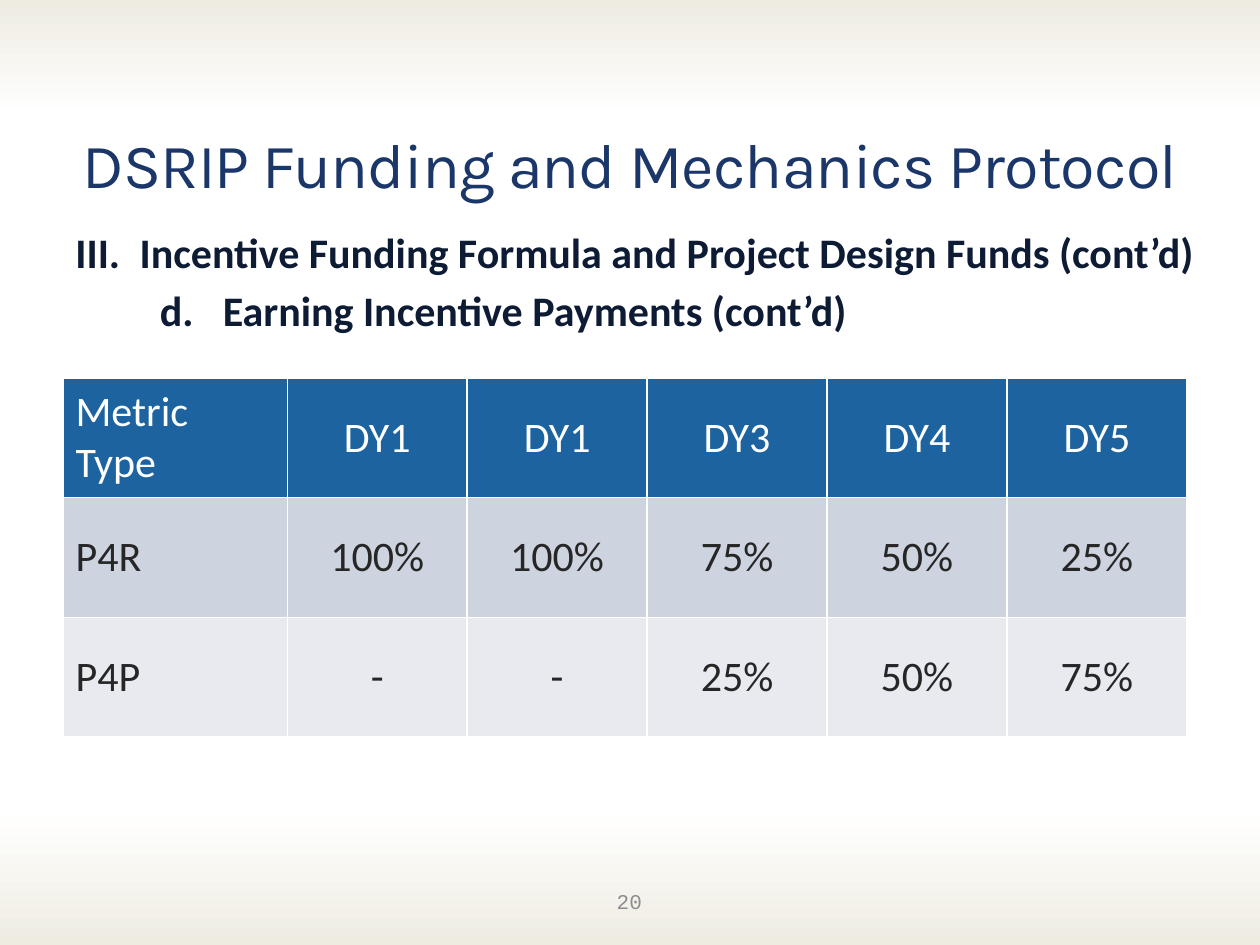
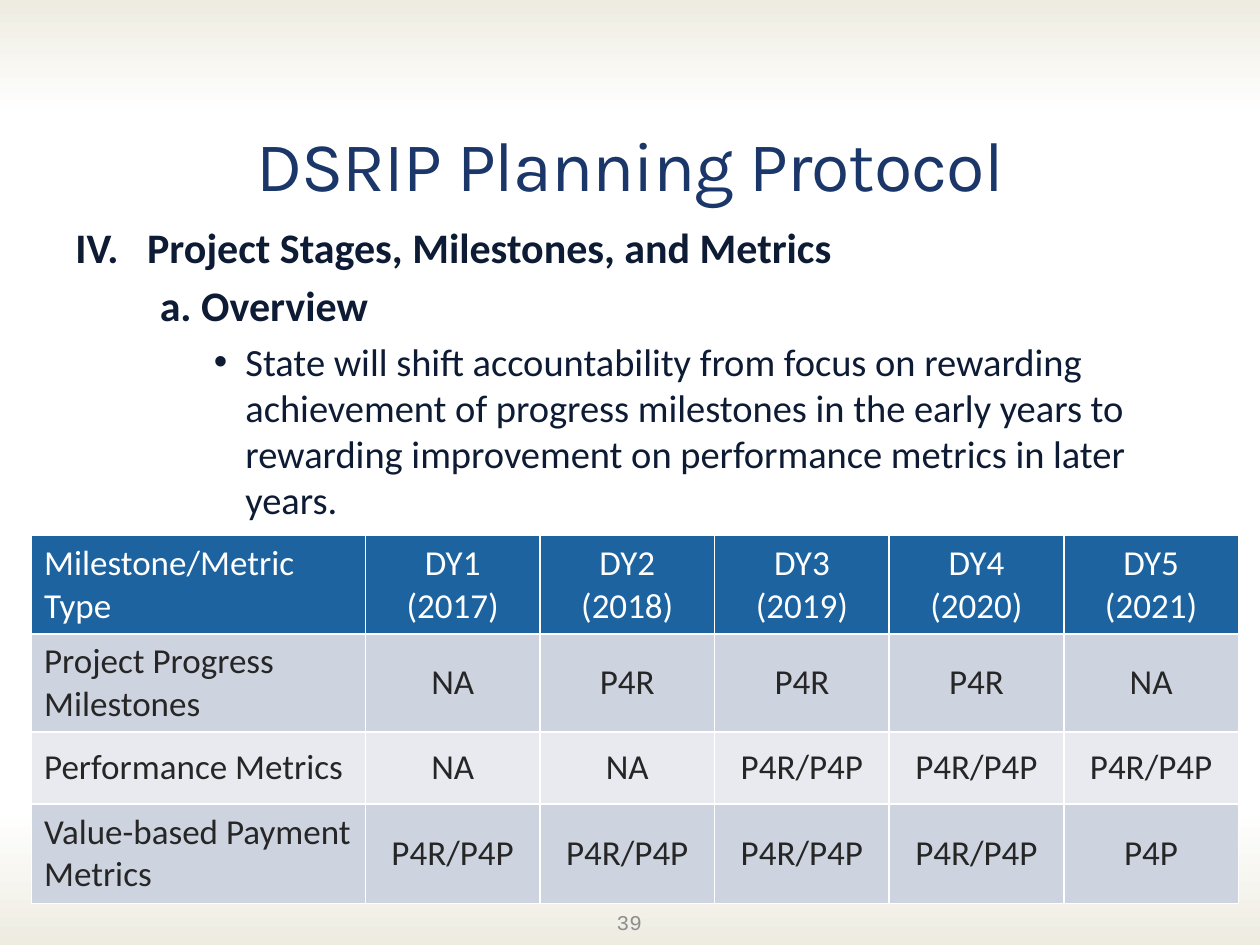
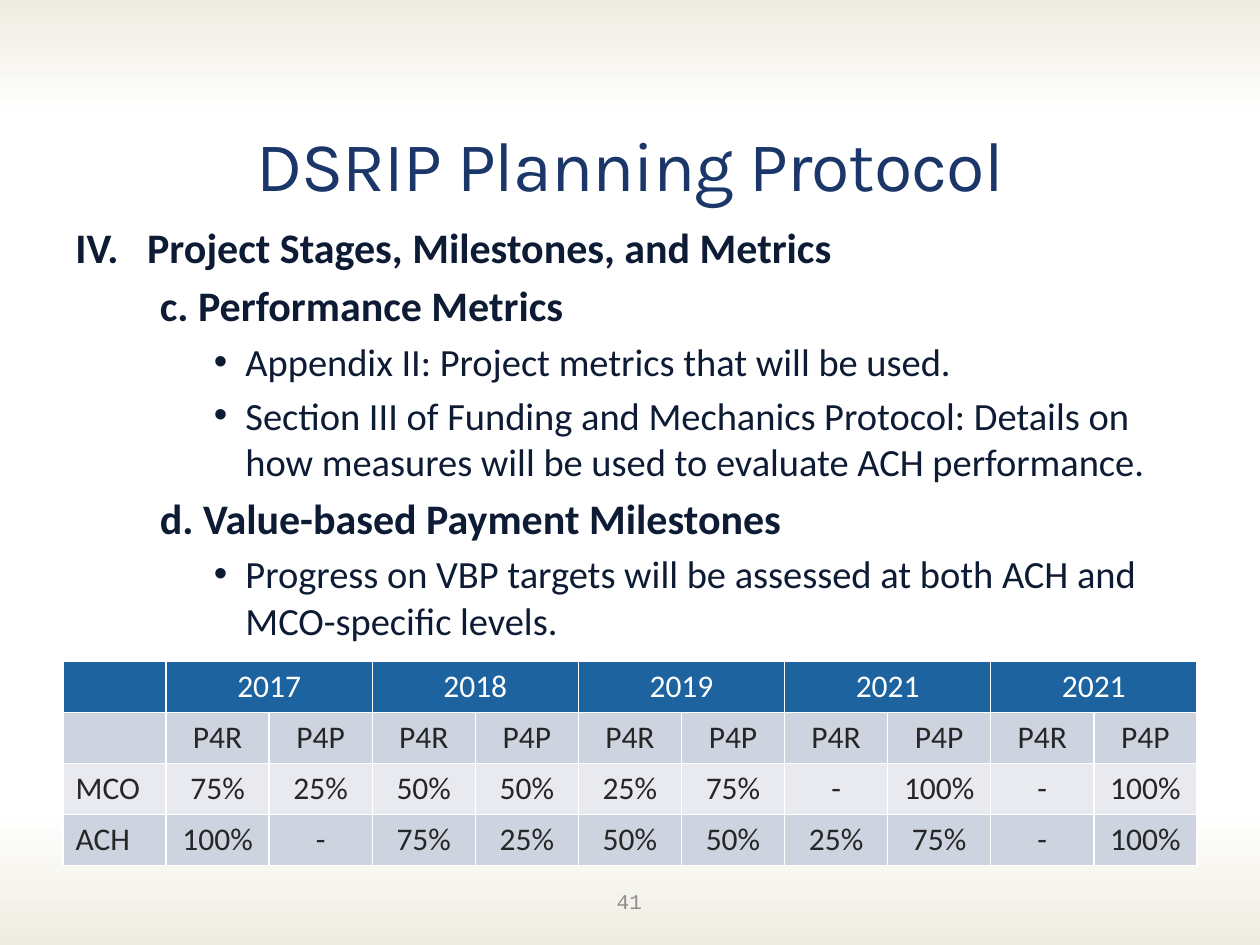
from lxml import etree
from pptx import Presentation
from pptx.dml.color import RGBColor
from pptx.enum.shapes import MSO_SHAPE
from pptx.enum.text import MSO_ANCHOR, PP_ALIGN
from pptx.oxml.ns import qn
from pptx.util import Inches, Pt

RECTANGLE = MSO_SHAPE.RECTANGLE
MIDDLE, TOP = MSO_ANCHOR.MIDDLE, MSO_ANCHOR.TOP
CENTER, LEFT = PP_ALIGN.CENTER, PP_ALIGN.LEFT

WHITE = RGBColor(0xFF, 0xFF, 0xFF)
BEIGE = RGBColor(0xEE, 0xEC, 0xE1)
TITLE_BLUE = RGBColor(0x1B, 0x36, 0x68)
NAVY = RGBColor(0x0E, 0x1B, 0x34)
GRAY = RGBColor(0x8D, 0x8D, 0x8D)
HEADER_BLUE = RGBColor(0x1C, 0x63, 0x9F)
CELL_TEXT = RGBColor(0x26, 0x26, 0x26)
ROW_FILLS = (RGBColor(0xCD, 0xD3, 0xDF), RGBColor(0xE8, 0xEA, 0xF0))

TITLE_FONT, BODY_FONT, NUMBER_FONT = "Karla", "Calibri", "Courier New"

# Outline levels: size, bold, left margin, hanging indent, bullet tag and attributes
LEVELS = {
    "section III": (24, True, 0.51, 0.51, None),
    "section IV": (24, True, 0.57, 0.57, None),
    "lettered": (24, True, 0.5, 0.5,
                 ("a:buAutoNum", {"type": "alphaLcPeriod", "startAt": "4"})),
    "topic": (24, True, 0, 0, None),
    "bullet": (22, False, 0.68, 0.25, ("a:buChar", {"char": "•"})),
}

NUMBER_TOP = 6.95
LOW_NUMBER_TOP = 7.13  # clears a table that reaches into the footer

PLANNING_TITLE = ("DSRIP Planning Protocol", 40)
STAGES_SECTION = ((0.5, 1.71, 7.67, 3.33),
                  [("section IV", "IV.\tProject Stages, Milestones, and Metrics")])
PLANNING_BODY = (1.17, 2.17, 8.34, 3.33)

# Content
SLIDES = [
    {
        "title": ("DSRIP Funding and Mechanics Protocol", 36),
        "number": ("20", NUMBER_TOP),
        "outline": [
            ((0.5, 1.75, 9.25, 0.54),
             [("section III", "III.\tIncentive Funding Formula and Project Design Funds (cont’d)")]),
            ((1.17, 2.21, 8.5, 3.33),
             [("lettered", "Earning Incentive Payments (cont’d)")]),
        ],
        "table": {
            "place": (0.5, 3, 8.92), "first_column": 1.78, "size": 24,
            "heights": [0.95] * 3, "header_span": 1,
            "rows": [
                ["Metric Type", "DY1", "DY1", "DY3", "DY4", "DY5"],
                ["P4R", "100%", "100%", "75%", "50%", "25%"],
                ["P4P", "-", "-", "25%", "50%", "75%"],
            ],
        },
    },
    {
        "title": PLANNING_TITLE,
        "number": ("39", LOW_NUMBER_TOP),
        "outline": [
            STAGES_SECTION,
            (PLANNING_BODY, [
                ("topic", "a. Overview"),
                ("bullet", "State will shift accountability from focus on rewarding "
                           "achievement of progress milestones in the early years to "
                           "rewarding improvement on performance metrics in later years."),
            ]),
        ],
        "table": {
            "place": (0.25, 4.25, 9.58), "first_column": 2.65, "size": 20,
            "heights": [0.78, 0.78, 0.57, 0.79], "header_span": 1,
            "rows": [
                ["Milestone/Metric Type", "DY1 (2017)", "DY2 (2018)", "DY3 (2019)",
                 "DY4 (2020)", "DY5 (2021)"],
                ["Project Progress Milestones", "NA", "P4R", "P4R", "P4R", "NA"],
                ["Performance Metrics", "NA", "NA", "P4R/P4P", "P4R/P4P", "P4R/P4P"],
                ["Value-based Payment Metrics", "P4R/P4P", "P4R/P4P", "P4R/P4P",
                 "P4R/P4P", "P4P"],
            ],
        },
    },
    {
        "title": PLANNING_TITLE,
        "number": ("41", NUMBER_TOP),
        "outline": [
            STAGES_SECTION,
            (PLANNING_BODY, [
                ("topic", "c. Performance Metrics"),
                ("bullet", "Appendix II: Project metrics that will be used."),
                ("bullet", "Section III of Funding and Mechanics Protocol: Details on how "
                           "measures will be used to evaluate ACH performance."),
                ("topic", "d. Value-based Payment Milestones"),
                ("bullet", "Progress on VBP targets will be assessed at both ACH and "
                           "MCO-specific levels."),
            ]),
        ],
        "table": {
            "place": (0.5, 5.25, 9), "first_column": 9 / 11, "size": 18,
            "heights": [1.62 / 4] * 4, "header_span": 2,
            "rows": [
                ["", "2017", "", "2018", "", "2019", "", "2021", "", "2021", ""],
                [""] + ["P4R", "P4P"] * 5,
                ["MCO", "75%", "25%", "50%", "50%", "25%", "75%", "-", "100%", "-", "100%"],
                ["ACH", "100%", "-", "75%", "25%", "50%", "50%", "25%", "75%", "-", "100%"],
            ],
        },
    },
]


def format_runs(para, font_name, size, color, bold=False):
    for run in para.runs:
        run.font.name = font_name
        run.font.size = Pt(size)
        run.font.color.rgb = color
        run.font.bold = bold


def add_box(page, place, anchor=TOP):
    frame = page.shapes.add_textbox(*map(Inches, place)).text_frame
    frame.word_wrap = True
    frame.vertical_anchor = anchor
    return frame


def add_bands(page):
    for top, height, rotation in ((6.42, 1.08, 180), (0, 0.92, 0)):
        band = page.shapes.add_shape(RECTANGLE, 0, Inches(top), Inches(10), Inches(height))
        band.rotation = rotation
        band.shadow.inherit = False
        band.line.fill.background()
        band.fill.gradient()
        band.fill.gradient_angle = 270
        for stop, color in zip(band.fill.gradient_stops, (BEIGE, WHITE)):
            stop.color.rgb = color


def add_centered_line(page, place, text, font_name, size, color):
    para = add_box(page, place, MIDDLE).paragraphs[0]
    para.text = text
    para.alignment = CENTER
    format_runs(para, font_name, size, color)
    return para


def add_title(page, text, size):
    para = add_centered_line(page, (0.5, 0.67, 9, 1.25), text, TITLE_FONT, size, TITLE_BLUE)
    para.runs[0].font._element.set("spc", "-50")


def add_page_number(page, number, top):
    # The box keeps its usual bottom edge or ends at the slide's edge
    height = min(0.4, 7.5 - top)
    add_centered_line(page, (3.83, top, 2.33, height), number, NUMBER_FONT, 12, GRAY)


def add_outline(page, place, items):
    frame = add_box(page, place)
    for index, (level, text) in enumerate(items):
        size, bold, margin, hanging, bullet = LEVELS[level]
        para = frame.add_paragraph() if index else frame.paragraphs[0]
        para.text = text
        if index:
            para.space_before = Pt(size * 0.2)
        properties = para._p.get_or_add_pPr()
        properties.set("marL", str(Inches(margin)))
        properties.set("indent", str(-Inches(hanging)))
        if bullet:
            tag, attributes = bullet
            if tag == "a:buChar":
                etree.SubElement(properties, qn("a:buFont"), typeface="Arial")
            etree.SubElement(properties, qn(tag), attributes)
        format_runs(para, BODY_FONT, size, NAVY, bold)


def set_borders(cell):
    properties = cell._tc.get_or_add_tcPr()
    for side in "LRTB":
        line = etree.SubElement(properties, qn("a:ln" + side), w=str(Pt(1)))
        fill = etree.SubElement(line, qn("a:solidFill"))
        etree.SubElement(fill, qn("a:srgbClr"), val=str(WHITE))


def add_metric_table(page, place, first_column, size, heights, header_span, rows):
    left, top, width = place
    column_count = len(rows[0])
    table = page.shapes.add_table(len(rows), column_count, Inches(left), Inches(top),
                                  Inches(width), Inches(sum(heights))).table
    other_column = (width - first_column) / (column_count - 1)
    for index, column in enumerate(table.columns):
        column.width = Inches(other_column if index else first_column)
    for row, height in zip(table.rows, heights):
        row.height = Inches(height)

    for row_index, row in enumerate(rows):
        is_header = row_index == 0
        for column_index, text in enumerate(row):
            cell = table.cell(row_index, column_index)
            set_borders(cell)
            cell.fill.solid()
            cell.fill.fore_color.rgb = HEADER_BLUE if is_header else ROW_FILLS[(row_index - 1) % 2]
            cell.vertical_anchor = MIDDLE
            para = cell.text_frame.paragraphs[0]
            para.alignment = CENTER if column_index else LEFT
            if text:
                para.text = text
                format_runs(para, BODY_FONT, size, WHITE if is_header else CELL_TEXT)

    # Each year heading covers its own group of columns
    if header_span > 1:
        for start in range(1, column_count, header_span):
            table.cell(0, start).merge(table.cell(0, start + header_span - 1))


def main():
    deck = Presentation()
    deck.slide_width, deck.slide_height = Inches(10), Inches(7.5)
    for content in SLIDES:
        page = deck.slides.add_slide(deck.slide_layouts[6])
        add_bands(page)
        add_title(page, *content["title"])
        for place, items in content["outline"]:
            add_outline(page, place, items)
        add_page_number(page, *content["number"])
        add_metric_table(page, **content["table"])
    deck.save("out.pptx")


if __name__ == "__main__":
    main()
